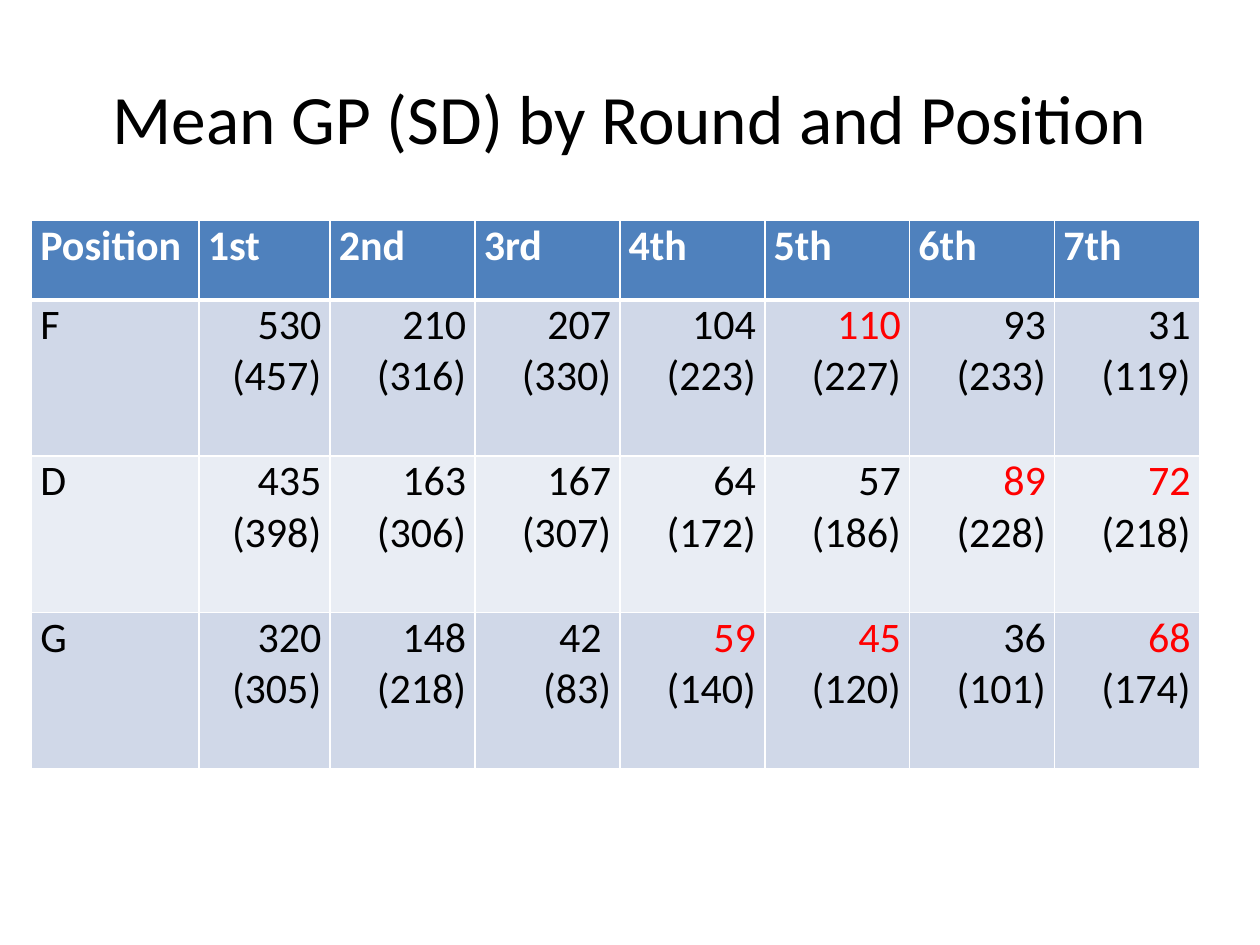
from dataclasses import dataclass

from lxml import etree
from pptx import Presentation
from pptx.dml.color import RGBColor
from pptx.enum.text import MSO_ANCHOR, MSO_AUTO_SIZE, PP_ALIGN
from pptx.oxml.ns import qn
from pptx.util import Inches, Pt

LEFT, CENTER, RIGHT = PP_ALIGN.LEFT, PP_ALIGN.CENTER, PP_ALIGN.RIGHT
MIDDLE = MSO_ANCHOR.MIDDLE
NO_AUTOFIT = MSO_AUTO_SIZE.NONE
TITLE_ONLY = 5


@dataclass(frozen=True)
class Theme:
    font: str = "Calibri"
    title_size: float = 39.6
    table_size: float = 24
    text: str = "000000"
    highlight: str = "FF0000"
    header_text: str = "FFFFFF"
    header_fill: str = "4F81BD"
    band_fills: tuple = ("D0D8E8", "E9EDF4")
    border: str = "FFFFFF"
    border_width: float = 1
    header_rule_width: float = 3


THEME = Theme()

HEADERS = ["Position", "1st", "2nd", "3rd", "4th", "5th", "6th", "7th"]
COLUMN_WIDTHS = [1.33, 1.04] + [1.15] * 6
ROW_HEIGHTS = [0.63] + [1.24] * 3

# Position, then (mean, standard deviation) for each round
GAMES_PLAYED = [
    ("F", [(530, 457), (210, 316), (207, 330), (104, 223), (110, 227), (93, 233), (31, 119)]),
    ("D", [(435, 398), (163, 306), (167, 307), (64, 172), (57, 186), (89, 228), (72, 218)]),
    ("G", [(320, 305), (148, 218), (42, 83), (59, 140), (45, 120), (36, 101), (68, 174)]),
]
HIGHLIGHTED = {("F", "5th"), ("D", "6th"), ("D", "7th"), ("G", "4th"), ("G", "5th"), ("G", "7th")}
TWO_PARAGRAPHS = {("G", "3rd")}


def add_run(paragraph, text, size, color, bold=False):
    run = paragraph.add_run()
    run.text = text
    run.font.name = THEME.font
    run.font.size = Pt(size)
    run.font.bold = bold
    run.font.color.rgb = RGBColor.from_string(color)


def add_title(slide, text):
    title = slide.shapes.title
    title.left, title.top = Inches(0.5), Inches(0.3)
    title.width, title.height = Inches(9), Inches(1.25)
    frame = title.text_frame
    frame.auto_size = NO_AUTOFIT
    frame.word_wrap = True
    frame.vertical_anchor = MIDDLE
    paragraph = frame.paragraphs[0]
    paragraph.alignment = CENTER
    add_run(paragraph, text, THEME.title_size, THEME.text)


def set_borders(cell, top, bottom):
    """Draw all four cell borders; top and bottom are widths in points."""
    properties = cell._tc.get_or_add_tcPr()
    widths = {"a:lnL": THEME.border_width, "a:lnR": THEME.border_width,
              "a:lnT": top, "a:lnB": bottom}
    for tag, width in widths.items():
        line = etree.SubElement(properties, qn(tag), w=str(Pt(width)))
        fill = etree.SubElement(line, qn("a:solidFill"))
        etree.SubElement(fill, qn("a:srgbClr"), val=THEME.border)


def format_cell(cell, row_index):
    cell.margin_left = cell.margin_right = Inches(0.07)
    cell.margin_top = cell.margin_bottom = 0
    top = THEME.header_rule_width if row_index == 1 else THEME.border_width
    bottom = THEME.header_rule_width if row_index == 0 else THEME.border_width
    set_borders(cell, top, bottom)
    bands = THEME.band_fills
    color = bands[(row_index - 1) % len(bands)] if row_index else THEME.header_fill
    cell.fill.solid()
    cell.fill.fore_color.rgb = RGBColor.from_string(color)


def write_label(cell, text, color, bold=False):
    paragraph = cell.text_frame.paragraphs[0]
    paragraph.alignment = LEFT
    add_run(paragraph, text, THEME.table_size, color, bold)


def write_statistic(cell, mean, deviation, key):
    """Write "mean (deviation)", with the mean in red where it is highlighted."""
    paragraph = cell.text_frame.paragraphs[0]
    paragraph.alignment = RIGHT
    mean_color = THEME.highlight if key in HIGHLIGHTED else THEME.text
    if key in TWO_PARAGRAPHS:
        add_run(paragraph, f"{mean} ", THEME.table_size, mean_color)
        paragraph = cell.text_frame.add_paragraph()
        paragraph.alignment = RIGHT
        add_run(paragraph, f"({deviation})", THEME.table_size, THEME.text)
    elif key in HIGHLIGHTED:
        add_run(paragraph, str(mean), THEME.table_size, mean_color)
        add_run(paragraph, f" ({deviation})", THEME.table_size, THEME.text)
    else:
        add_run(paragraph, f"{mean} ({deviation})", THEME.table_size, THEME.text)


def add_games_table(slide):
    table = slide.shapes.add_table(
        len(ROW_HEIGHTS), len(COLUMN_WIDTHS), Inches(0.25), Inches(1.75),
        Inches(sum(COLUMN_WIDTHS)), Inches(sum(ROW_HEIGHTS))).table
    for column, width in zip(table.columns, COLUMN_WIDTHS):
        column.width = Inches(width)
    for row_index, (row, height) in enumerate(zip(table.rows, ROW_HEIGHTS)):
        row.height = Inches(height)
        for cell in row.cells:
            format_cell(cell, row_index)

    for column_index, header in enumerate(HEADERS):
        write_label(table.cell(0, column_index), header, THEME.header_text, bold=True)
    for row_index, (position, statistics) in enumerate(GAMES_PLAYED, start=1):
        write_label(table.cell(row_index, 0), position, THEME.text)
        for column_index, (mean, deviation) in enumerate(statistics, start=1):
            key = (position, HEADERS[column_index])
            write_statistic(table.cell(row_index, column_index), mean, deviation, key)


def main():
    presentation = Presentation()
    presentation.slide_width, presentation.slide_height = Inches(10), Inches(7.5)
    slide = presentation.slides.add_slide(presentation.slide_layouts[TITLE_ONLY])
    add_title(slide, "Mean GP (SD) by Round and Position")
    add_games_table(slide)
    presentation.save("out.pptx")


if __name__ == "__main__":
    main()
